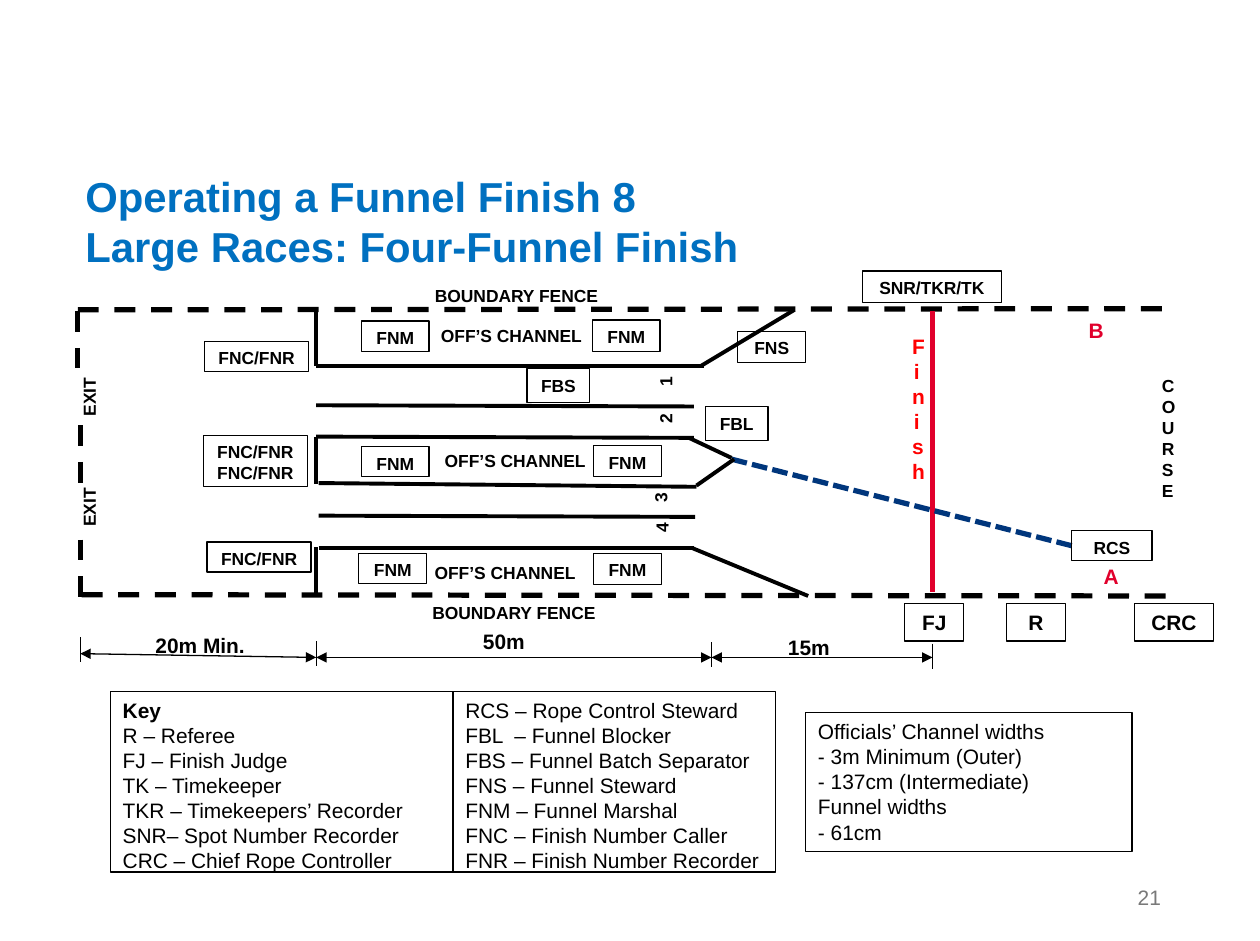
from dataclasses import dataclass

from lxml import etree
from pptx import Presentation
from pptx.dml.color import RGBColor
from pptx.enum import dml, shapes, text
from pptx.oxml import ns
from pptx.util import Inches, Pt


@dataclass(frozen=True)
class Theme:
    font: str = "Arial"
    black: str = "000000"
    title_blue: str = "0070C0"
    rope_blue: str = "00367C"
    finish_red: str = "E1002C"
    letter_red: str = "FF0000"
    page_grey: str = "797979"
    title: int = 24
    body: int = 12
    tag: int = 10
    fence: float = 3
    rope: float = 2.25
    thin: float = 0.75


THEME = Theme()
CENTER, LEFT, RIGHT = text.PP_ALIGN.CENTER, text.PP_ALIGN.LEFT, text.PP_ALIGN.RIGHT
DASH, SHORT_DASH = dml.MSO_LINE.DASH, dml.MSO_LINE.SQUARE_DOT


def fill_text(frame, lines, size, color, bold, align, wrap, anchor=text.MSO_ANCHOR.TOP):
    """Write one paragraph per line; bold is a flag or the number of leading bold lines."""
    frame.word_wrap = wrap
    frame.auto_size = text.MSO_AUTO_SIZE.NONE
    frame.vertical_anchor = anchor
    for index, line in enumerate(lines):
        paragraph = frame.paragraphs[0] if index == 0 else frame.add_paragraph()
        paragraph.alignment = align
        run = paragraph.add_run()
        run.text = line
        run.font.name = THEME.font
        run.font.size = Pt(size)
        run.font.bold = bold if isinstance(bold, bool) else index < bold
        run.font.color.rgb = RGBColor.from_string(color)


class Region:
    """Draws on the slide in inches measured from the corner of its box."""

    def __init__(self, slide, left, top):
        self.shapes, self.left, self.top = slide.shapes, left, top

    def place(self, x, y):
        return Inches(self.left + x), Inches(self.top + y)

    def label(self, content, x, y, w, h=0.27, size=THEME.tag, color=THEME.black,
              bold=True, align=CENTER, wrap=False, rotation=0, anchor=text.MSO_ANCHOR.TOP):
        label = self.shapes.add_textbox(*self.place(x, y), Inches(w), Inches(h))
        label.rotation = rotation
        fill_text(label.text_frame, [content], size, color, bold, align, wrap, anchor)

    def box(self, lines, x, y, w, h, size=THEME.tag, bold=True, align=CENTER, wrap=False):
        box = self.shapes.add_shape(shapes.MSO_SHAPE.RECTANGLE, *self.place(x, y),
                                    Inches(w), Inches(h))
        box.shadow.inherit = False
        box.fill.background()
        box.line.color.rgb = RGBColor.from_string(THEME.black)
        box.line.width = Pt(THEME.thin)
        fill_text(box.text_frame, lines, size, THEME.black, bold, align, wrap)

    def line(self, x1, y1, x2, y2, width, color=THEME.black, dash=None, arrows=False):
        line = self.shapes.add_connector(shapes.MSO_CONNECTOR.STRAIGHT,
                                         *self.place(x1, y1), *self.place(x2, y2))
        line.line.color.rgb = RGBColor.from_string(color)
        line.line.width = Pt(width)
        if dash:
            line.line.dash_style = dash
        properties = line._element.spPr
        if arrows:
            for end in ("a:headEnd", "a:tailEnd"):
                etree.SubElement(properties.find(ns.qn("a:ln")), ns.qn(end), type="triangle")
        etree.SubElement(properties, ns.qn("a:effectLst"))


def add_title(slide, left, top, width, height):
    title = slide.shapes.title
    title.left, title.top = Inches(left), Inches(top)
    title.width, title.height = Inches(width), Inches(height)
    fill_text(title.text_frame,
              ["Operating a Funnel Finish 8", "Large Races: Four-Funnel Finish"],
              THEME.title, THEME.title_blue, True, LEFT, False)


def add_course(slide, left, top):
    """Boundary fences, exits, finish line and the officials around it."""
    course = Region(slide, left, top)
    for fence in [(-0.02, 0, 8.72, -0.01), (0.01, 2.27, 8.66, 2.28),
                  (-0.02, 0.01, -0.02, 0.46), (0, 0.92, 0, 1.43), (0, 1.83, 0, 2.29)]:
        course.line(*fence, THEME.fence, dash=DASH)
    course.line(6.79, 0.01, 6.79, 2.25, THEME.fence, THEME.finish_red)
    course.line(5.19, 1.19, 7.9, 1.88, THEME.fence, THEME.rope_blue, SHORT_DASH)

    course.label("COURSE", 8.52, 0.47, 0.27, 1.11, wrap=True)
    course.label("Finish", 6.53, 0.14, 0.27, 1.31, THEME.body, THEME.letter_red, wrap=True)
    for end, x, y in [("A", 8.03, 1.97), ("B", 7.91, 0.01)]:
        course.label(end, x, y, 0.37, size=THEME.body, color=THEME.finish_red)
    for y in (0.56, 1.44):
        course.label("EXIT", -0.19, y, 0.52, rotation=270)
    for x, y in [(2.66, -0.25), (2.64, 2.28)]:
        course.label("BOUNDARY FENCE", x, y, 1.63)

    course.box(["SNR/TKR/TK"], 6.23, -0.31, 1.11, 0.25)
    course.box(["RCS"], 7.9, 1.76, 0.64, 0.24)
    for official, x, width in [("FJ", 6.57, 0.47), ("R", 7.38, 0.47), ("CRC", 8.4, 0.63)]:
        course.box([official], x, 2.34, width, 0.3, THEME.body)


def add_funnels(slide, left, top):
    """Four funnels, three officials' channels and the staff who run them."""
    funnels = Region(slide, left, top)
    walls = [(0, 0.45, 3.09, 0.45), (0, 0.76, 3.01, 0.77), (0, 1.01, 3.01, 1.02),
             (0.02, 1.38, 3.03, 1.41), (0.02, 1.64, 3.02, 1.65), (0.02, 1.9, 3.01, 1.9)]
    mouths = [(3.06, 0.45, 3.81, 0), (2.97, 1.02, 3.31, 1.18),
              (3.03, 1.4, 3.33, 1.19), (3, 1.9, 3.92, 2.28)]
    channel_ends = [(0, -0.01, 0, 0.45), (0, 1.01, 0, 1.39), (0, 1.89, 0, 2.29)]
    for rope in walls + mouths + channel_ends:
        funnels.line(*rope, THEME.rope)

    for near_x, near_y, far_x, far_y, name_x, name_y in [
            (0.36, 0.09, 2.2, 0.08, 0.89, 0.07),
            (0.36, 1.09, 2.21, 1.08, 0.92, 1.07),
            (0.34, 1.94, 2.21, 1.94, 0.84, 1.96)]:
        funnels.box(["FNM"], near_x, near_y, 0.54, 0.24)
        funnels.box(["FNM"], far_x, far_y, 0.54, 0.25)
        funnels.label("OFF’S CHANNEL", name_x, name_y, 1.33)

    for callers, x, y, height in [(1, -0.89, 0.25, 0.24), (2, -0.9, 1, 0.41),
                                  (1, -0.87, 1.85, 0.24)]:
        funnels.box(["FNC/FNR"] * callers, x, y, 0.83, height)
    for steward, x, y, width, height in [("FBS", 1.68, 0.47, 0.5, 0.27),
                                         ("FBL", 3.1, 0.77, 0.5, 0.27),
                                         ("FNS", 3.36, 0.17, 0.54, 0.25)]:
        funnels.box([steward], x, y, width, height)
    for number, x, y in [("1", 2.69, 0.44), ("2", 2.69, 0.73),
                         ("3", 2.65, 1.36), ("4", 2.66, 1.6)]:
        funnels.label(number, x, y, 0.19, rotation=270)


def add_distances(slide, left, top):
    distances = Region(slide, left, top)
    stops = [(0, 0), (1.88, 0.03), (5.03, 0.04), (6.79, 0.05)]
    for x, y in stops:
        distances.line(x, y, x, y + 0.2, THEME.thin)
    for (start, _), (end, _), start_y in zip(stops, stops[1:], (0.13, 0.16, 0.16)):
        distances.line(start, start_y, end, 0.16, THEME.thin, arrows=True)
    for distance, x, y, width in [("20m Min.", 0.48, -0.09, 0.95),
                                  ("50m", 3.1, -0.12, 0.55), ("15m", 5.53, -0.07, 0.55)]:
        distances.label(distance, x, y, width, size=THEME.body)


def add_key(slide, left, top):
    """Abbreviations in two columns, with the channel widths beside them."""
    key = Region(slide, left, top)
    officials = ["Key", "R – Referee", "FJ – Finish Judge", "TK – Timekeeper",
                 "TKR – Timekeepers’ Recorder", "SNR– Spot Number Recorder",
                 "CRC – Chief Rope Controller"]
    funnel_staff = ["RCS – Rope Control Steward", "FBL  – Funnel Blocker",
                    "FBS – Funnel Batch Separator", "FNS – Funnel Steward",
                    "FNM – Funnel Marshal", "FNC – Finish Number Caller",
                    "FNR – Finish Number Recorder"]
    widths = ["Officials’ Channel widths", "- 3m Minimum (Outer)",
              "- 137cm (Intermediate)", "Funnel widths", "- 61cm"]
    for lines, x, y, width, height, bold_lines in [
            (officials, 0, 0, 2.73, 1.44, 1), (funnel_staff, 2.73, 0, 2.57, 1.44, 0),
            (widths, 5.54, 0.17, 2.6, 1.11, 0)]:
        key.box(lines, x, y, width, height, THEME.body, bold_lines, LEFT, True)


def add_page_number(slide, left, top):
    Region(slide, left, top).label("21", 0, 0, 2.26, 0.4, THEME.body, THEME.page_grey,
                                   False, RIGHT, True, anchor=text.MSO_ANCHOR.MIDDLE)


def main():
    deck = Presentation()
    deck.slide_width, deck.slide_height = Inches(10.04), Inches(7.5)
    slide = deck.slides.add_slide(deck.slide_layouts.get_by_name("Title Only"))
    add_title(slide, 0.58, 1.31, 5.45, 0.91)
    add_course(slide, 0.64, 2.47)
    add_funnels(slide, 2.52, 2.47)
    add_distances(slide, 0.64, 5.08)
    add_key(slide, 0.88, 5.51)
    add_page_number(slide, 7.09, 6.95)
    deck.save("out.pptx")


if __name__ == "__main__":
    main()
